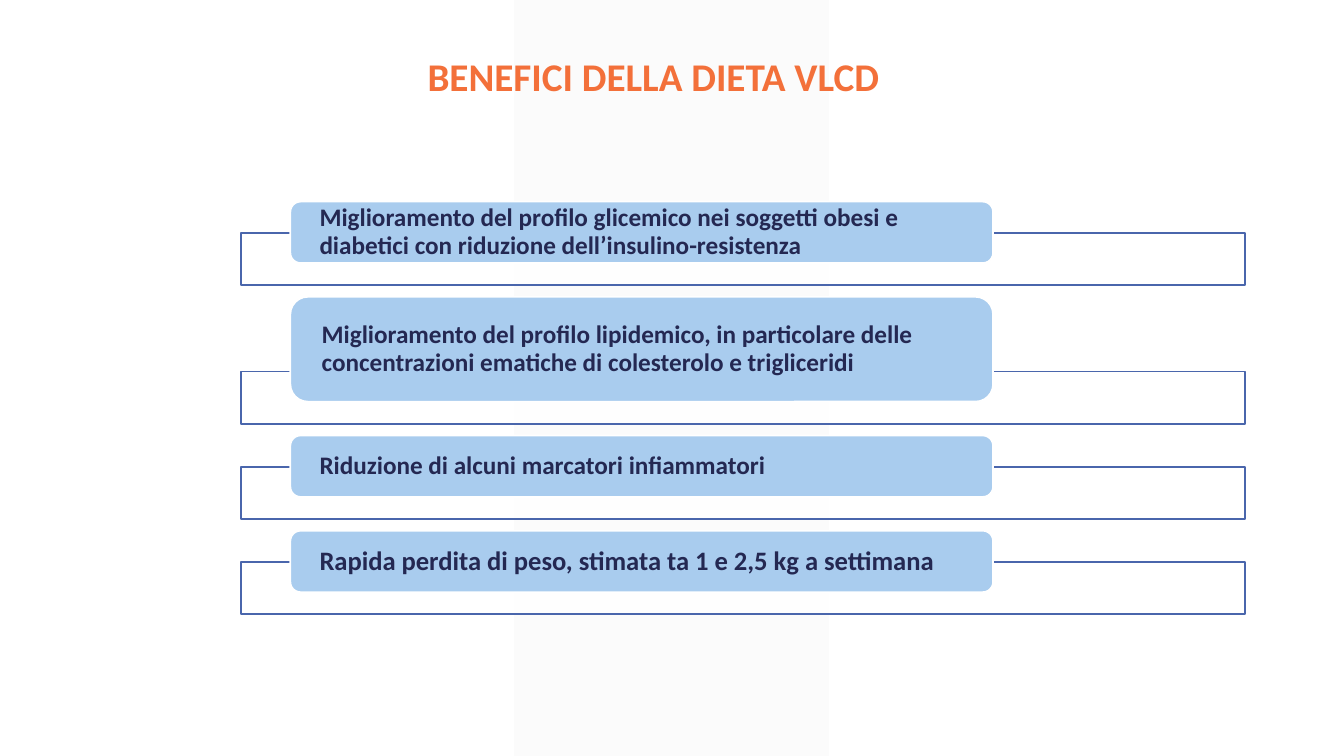
"""Build the slide on the benefits of the VLCD diet."""
from lxml.etree import SubElement
from pptx import Presentation
from pptx.dml.color import RGBColor
from pptx.enum.shapes import MSO_SHAPE as Shape
from pptx.enum.text import MSO_ANCHOR as Anchor, PP_ALIGN as Align
from pptx.oxml.ns import qn
from pptx.util import Inches, Pt


def paint(color, code, alpha=100):
    color.rgb = RGBColor.from_string(code)
    if alpha < 100:
        node = color._xFill.find(qn("a:srgbClr"))
        SubElement(node, qn("a:alpha"), val=str(alpha * 1000))


def block(kind, box, fill, alpha=100, line=None):
    shape = slide.shapes.add_shape(kind, *map(Inches, box))
    shape.shadow.inherit = False
    shape.fill.solid()
    shape.fill.fore_color.rgb = RGBColor.from_string(fill)
    if alpha < 100:
        node = shape._element.spPr.find(qn("a:solidFill")).find(qn("a:srgbClr"))
        SubElement(node, qn("a:alpha"), val=str(alpha * 1000))
    if line:
        paint(shape.line.color, line)
        shape.line.width = Pt(1.25)
    else:
        shape.line.fill.background()
    return shape


deck = Presentation()
deck.slide_width, deck.slide_height = Inches(13.33), Inches(7.5)
slide = deck.slides.add_slide(deck.slide_layouts[5])

band = block(Shape.PARALLELOGRAM, (5.1, 0, 3.12, 7.5), "F2F2F2", 30)
band.adjustments[0] = 0
slide.shapes._spTree.insert(2, band._element)

title = slide.shapes.title
title.left, title.top, title.width, title.height = map(Inches, (2.01, 0.47, 8.94, 0.57))
title.text_frame.text = "BENEFICI DELLA DIETA VLCD"
title.text_frame.vertical_anchor = Anchor.TOP
head = title.text_frame.paragraphs[0]
head.alignment = Align.CENTER
head.font.name, head.font.size, head.font.bold = "Calibri", Pt(28), True
paint(head.font.color, "F3703A")

items = [
    ("Miglioramento del profilo glicemico nei soggetti obesi e diabetici "
     "con riduzione dell’insulino-resistenza", 0.61, 18),
    ("Miglioramento del profilo lipidemico, in particolare delle "
     "concentrazioni ematiche di colesterolo e trigliceridi", 1.04, 18),
    ("Riduzione di alcuni marcatori infiammatori", 0.61, 18),
    ("Rapida perdita di peso, stimata ta 1 e 2,5 kg a settimana", 0.61, 19),
]
top, gap = 2, 0.335
for text, height, size in items:
    block(Shape.RECTANGLE, (2.39, top + height - 0.3, 9.96, 0.52), "FFFFFF", 90, "4A66AC")
    label = block(Shape.ROUNDED_RECTANGLE, (2.88, top, 6.97, height), "A9CCEE", line="FFFFFF")
    frame = label.text_frame
    frame.text, frame.word_wrap = text, True
    frame.vertical_anchor = Anchor.MIDDLE
    frame.margin_left = frame.margin_right = Inches(0.26)
    frame.margin_top = frame.margin_bottom = 0
    para = frame.paragraphs[0]
    para.alignment, para.line_spacing = Align.LEFT, 0.9
    para.font.name, para.font.size, para.font.bold = "Calibri", Pt(size), True
    paint(para.font.color, "242852")
    top += height + gap

deck.save("out.pptx")
